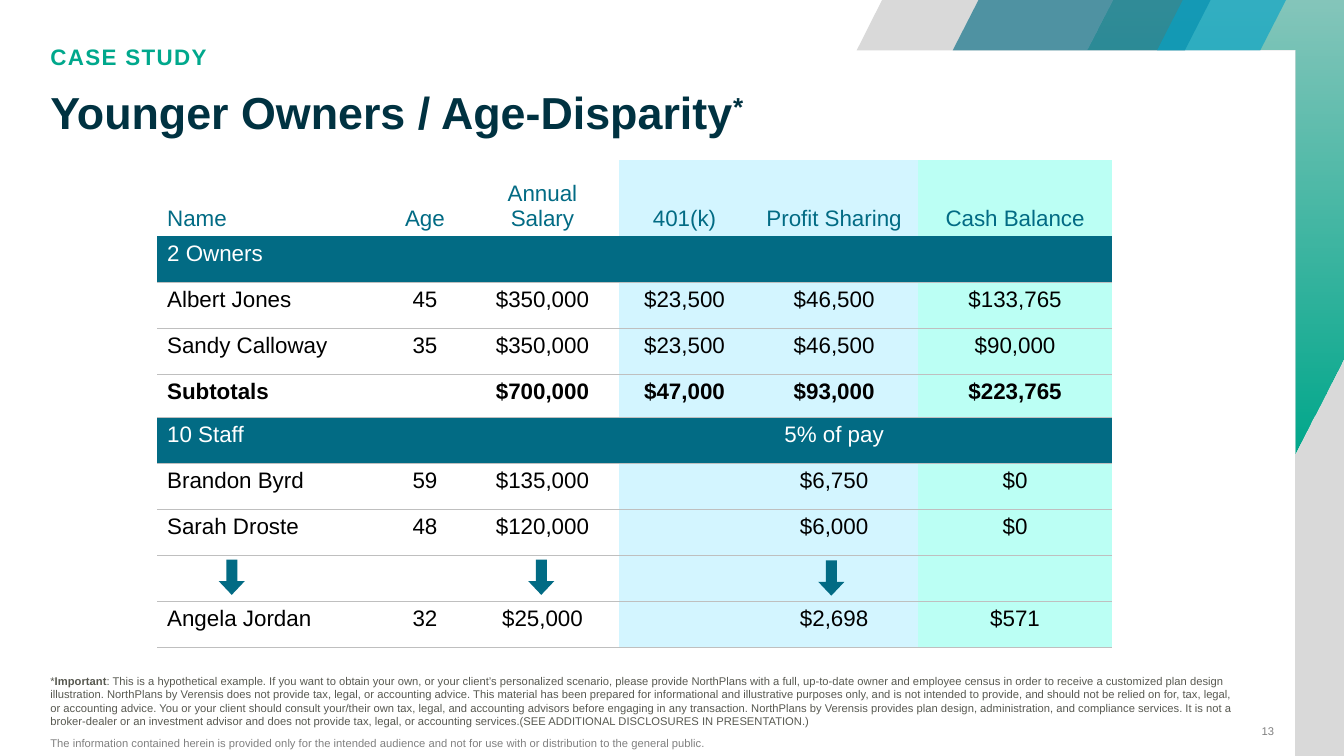
from lxml.etree import SubElement
from pptx import Presentation
from pptx.dml.color import RGBColor
from pptx.enum.shapes import MSO_SHAPE
from pptx.enum.text import MSO_ANCHOR, PP_ALIGN
from pptx.oxml.ns import qn
from pptx.util import Cm, Pt

TEAL, GREEN, NAVY = "026B84", "00A88C", "003241"
SILVER, RULE, GREY, INK = "D9D9D9", "BFBFBF", "808080", "585951"
SKY, MINT, WHITE, BLACK = "D3F5FF", "BBFFF4", "FFFFFF", "000000"

COLUMN_WIDTHS = [5.72, 2.06, 3.86, 3.3, 4.24, 4.88]
COLUMN_FILLS = [None, None, None, SKY, SKY, MINT]
HEADER_HEIGHT, ROW_HEIGHT, SUBTOTAL_HEIGHT = 1.91, 1.16, 1.09
ROWS = [
    ("header", ["Name", "Age", "Annual Salary", "401(k)", "Profit Sharing", "Cash Balance"]),
    ("section", ["2 Owners", "", "", "", "", ""]),
    ("person", ["Albert Jones", "45", "$350,000", "$23,500", "$46,500", "$133,765"]),
    ("person", ["Sandy Calloway", "35", "$350,000", "$23,500", "$46,500", "$90,000"]),
    ("subtotal", ["Subtotals", "", "$700,000", "$47,000", "$93,000", "$223,765"]),
    ("section", ["10 Staff", "", "", "", "5% of pay", ""]),
    ("person", ["Brandon Byrd", "59", "$135,000", "", "$6,750", "$0"]),
    ("person", ["Sarah Droste", "48", "$120,000", "", "$6,000", "$0"]),
    ("person", ["", "", "", "", "", ""]),
    ("person", ["Angela Jordan", "32", "$25,000", "", "$2,698", "$571"]),
]
TEXT_COLOURS = {"header": TEAL, "section": WHITE, "person": BLACK, "subtotal": BLACK}
ROW_HEIGHTS = {"header": HEADER_HEIGHT, "subtotal": SUBTOTAL_HEIGHT}

EXAMPLE_NOTE = (
    ": This is a hypothetical example. If you want to obtain your own, or your client’s "
    "personalized scenario, please provide NorthPlans with a full, up-to-date owner and employee "
    "census in order to receive a customized plan design illustration. "
)
ADVICE_NOTE = (
    "NorthPlans by Verensis does not provide tax, legal, or accounting advice. This material has "
    "been prepared for informational and illustrative purposes only, and is not intended to "
    "provide, and should not be relied on for, tax, legal, or accounting advice. You or your "
    "client should consult your/their own tax, legal, and accounting advisors before engaging in "
    "any transaction. "
)
SERVICES_NOTE = (
    "NorthPlans by Verensis provides plan design, administration, and compliance services. It is "
    "not a broker-dealer or an investment advisor and does not provide tax, legal, or accounting "
    "services.(SEE ADDITIONAL DISCLOSURES IN PRESENTATION.)"
)


def rgb(colour):
    """Turn a hex string into a colour value."""
    return RGBColor.from_string(colour)


def apply(target, values):
    """Set each attribute of the target from a dict."""
    for name, value in values.items():
        setattr(target, name, value)


def paint(fill, colour):
    """Fill with a solid colour, or with nothing."""
    if colour is None:
        fill.background()
    else:
        fill.solid()
        fill.fore_color.rgb = rgb(colour)


def set_alpha(element, percent):
    """Make every colour inside the element partly transparent."""
    for colour in element.iter(qn("a:srgbClr")):
        SubElement(colour, qn("a:alpha")).set("val", str(percent * 1000))


def add_span(para, text, size, colour, bold=False, extras=None):
    """Add one run of formatted text."""
    span = para.add_run()
    span.text = text
    apply(span.font, {"name": "Arial", "size": Pt(size), "bold": bold})
    span.font.color.rgb = rgb(colour)
    for name, value in (extras or {}).items():
        span._r.get_or_add_rPr().set(name, value)


def add_text(page, bounds, spans, anchor=MSO_ANCHOR.TOP, **layout):
    """Add a text box without margins that holds one paragraph."""
    box = page.shapes.add_textbox(*map(Cm, bounds))
    apply(box.text_frame, {
        "word_wrap": True, "vertical_anchor": anchor,
        "margin_left": 0, "margin_top": 0, "margin_right": 0, "margin_bottom": 0,
    })
    para = box.text_frame.paragraphs[0]
    apply(para, layout)
    for span in spans:
        add_span(para, *span)


def add_outline(page, points, colour):
    """Add a filled polygon without a line."""
    corners = [(Cm(x), Cm(y)) for x, y in points]
    builder = page.shapes.build_freeform(*corners[0])
    builder.add_line_segments(corners[1:], close=True)
    outline = builder.convert_to_shape()
    outline.shadow.inherit = False
    outline.line.fill.background()
    paint(outline.fill, colour)
    return outline


def add_fading_band(page, points):
    """Add a polygon that fades from light to full green downwards."""
    band = add_outline(page, points, GREEN)
    band.fill.gradient()
    band.fill.gradient_angle = 270
    for position, stop in enumerate(band.fill.gradient_stops):
        stop.position = position
        stop.color.rgb = rgb(GREEN)
    first_stop = next(band._element.iter(qn("a:gs")))
    set_alpha(first_stop, 39)


def add_ribbon(page, left, width, colour):
    """Add a translucent slanted ribbon at the top edge."""
    points = [(left + 0.65, 0), (left + width, 0), (left + width - 0.65, 1.27), (left, 1.27)]
    set_alpha(add_outline(page, points, colour)._element.spPr, 64)


def add_border(cell, side, colour):
    """Draw one side of a cell, or clear it."""
    line = SubElement(cell._tc.get_or_add_tcPr(), qn(f"a:ln{side}"), w=str(Pt(1)))
    if colour is None:
        SubElement(line, qn("a:noFill"))
    else:
        SubElement(SubElement(line, qn("a:solidFill")), qn("a:srgbClr"), val=colour)


def fill_cell(cell, kind, text, column, top, bottom):
    """Format one table cell and write its text."""
    for side, colour in {"L": None, "R": None, "T": top, "B": bottom}.items():
        add_border(cell, side, colour)
    paint(cell.fill, TEAL if kind == "section" else COLUMN_FILLS[column])
    cell.vertical_anchor = MSO_ANCHOR.BOTTOM if kind == "header" else MSO_ANCHOR.TOP
    para = cell.text_frame.paragraphs[0]
    para.alignment = PP_ALIGN.CENTER if column else PP_ALIGN.LEFT
    if text:
        add_span(para, text, 16, TEXT_COLOURS[kind], kind == "subtotal")


def add_plan_table(page):
    """Add the table of owners and staff."""
    heights = [ROW_HEIGHTS.get(kind, ROW_HEIGHT) for kind, _ in ROWS]
    bounds = (3.96, 4.04, sum(COLUMN_WIDTHS), sum(heights))
    table = page.shapes.add_table(len(ROWS), len(COLUMN_WIDTHS), *map(Cm, bounds)).table
    apply(table, {"first_row": False, "horz_banding": False})
    for column, width in zip(table.columns, COLUMN_WIDTHS):
        column.width = Cm(width)
    top = None
    for index, (kind, texts) in enumerate(ROWS):
        table.rows[index].height = Cm(heights[index])
        bottom = TEAL if kind == "header" else RULE
        for column, text in enumerate(texts):
            fill_cell(table.cell(index, column), kind, text, column, top, bottom)
        top = bottom


def add_arrow(page, left, top):
    """Add a small arrow that points down."""
    arrow = page.shapes.add_shape(MSO_SHAPE.UP_ARROW, *map(Cm, (left, top, 0.66, 0.89)))
    arrow.rotation = 180
    arrow.adjustments[0], arrow.adjustments[1] = 0.42, 0.53
    arrow.shadow.inherit = False
    arrow.line.fill.background()
    paint(arrow.fill, TEAL)


def main():
    """Build the slide and save it."""
    deck = Presentation()
    apply(deck, {"slide_width": Cm(33.87), "slide_height": Cm(19.05)})
    page = deck.slides.add_slide(deck.slide_layouts[6])
    add_outline(page, [(22.23, 0), (33.87, 0), (33.87, 19.05), (32.64, 19.05),
                       (32.64, 1.27), (21.59, 1.27)], SILVER)
    add_fading_band(page, [(28.07, 0), (33.87, 0), (33.87, 9.04), (32.64, 11.43),
                           (32.64, 1.27), (27.41, 1.27)])
    add_ribbon(page, 24.01, 6.5, TEAL)
    add_ribbon(page, 29.16, 3.25, "05A2C6")
    add_text(page, (1.27, 1.17, 25.4, 0.89),
             [("CASE STUDY", 16, GREEN, True, {"spc": "100"})], line_spacing=0.9)
    add_plan_table(page)
    add_text(page, (31.14, 18.11, 0.97, 0.61), [("13", 8, GREY)],
             MSO_ANCHOR.MIDDLE, alignment=PP_ALIGN.RIGHT)
    add_text(page, (1.27, 2.29, 25.4, 1.65),
             [("Younger Owners / Age-Disparity", 32, NAVY, True),
              ("*", 32, NAVY, True, {"baseline": "30000"})], line_spacing=0.9)
    notes = [(note, 8, INK) for note in (EXAMPLE_NOTE, ADVICE_NOTE, SERVICES_NOTE)]
    add_text(page, (1.27, 16.99, 30.05, 1.37),
             [("*", 8, INK), ("Important", 8, INK, True), *notes])
    add_text(page, (1.27, 18.42, 17.02, 0.61),
             [("The information contained herein is provided only for the intended audience and "
               "not for use with or distribution to the general public.", 8, GREY)],
             MSO_ANCHOR.MIDDLE)
    for left, top in ((5.51, 14.1), (13.31, 14.1), (20.62, 14.12)):
        add_arrow(page, left, top)
    deck.save("out.pptx")


if __name__ == "__main__":
    main()
